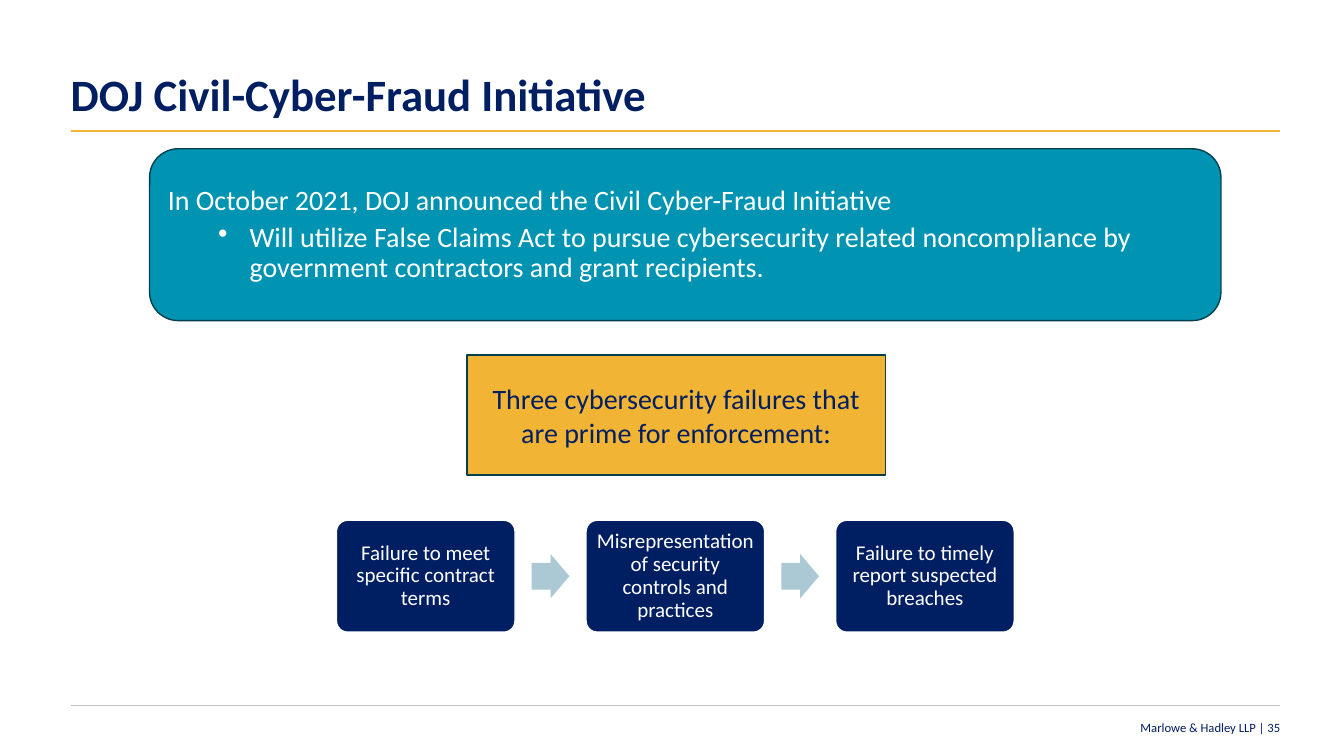
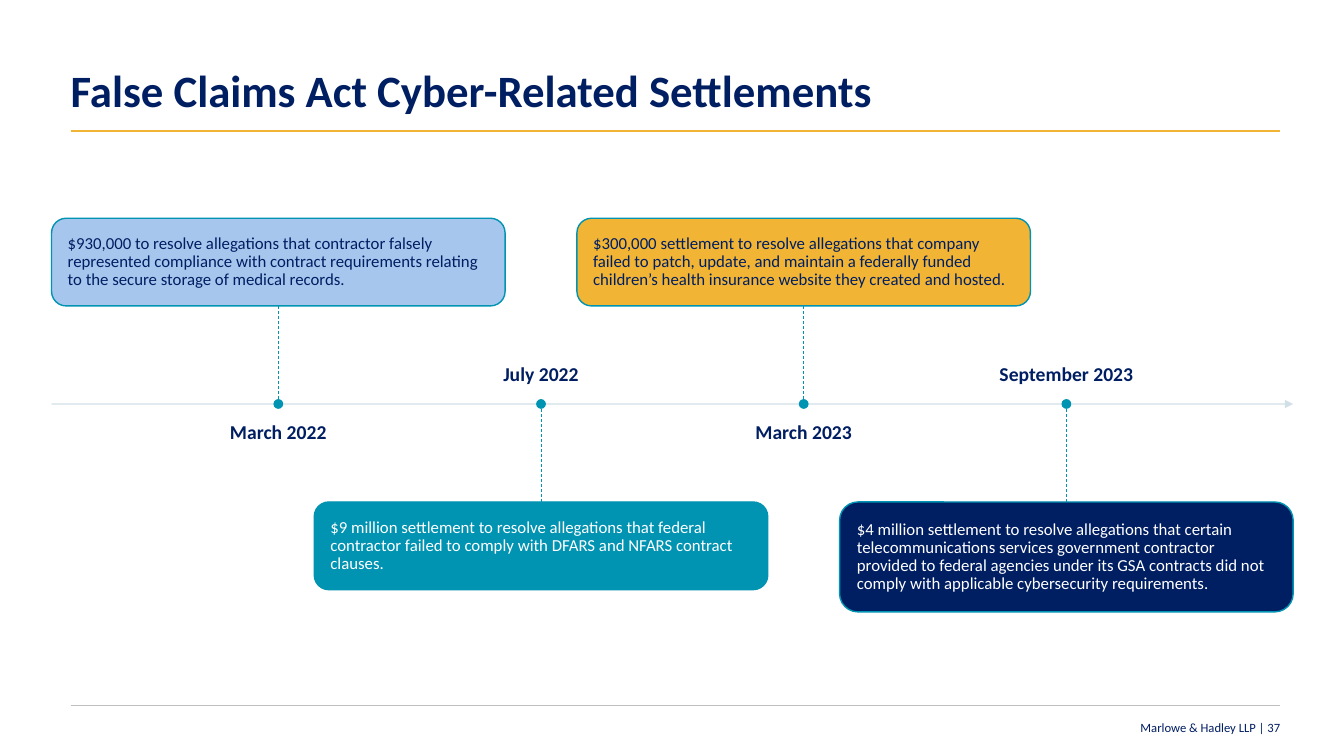
"""Build two slides on cyber-fraud enforcement: an initiative overview and a settlement timeline."""
from lxml import etree
from pptx import Presentation
from pptx.dml.color import RGBColor
from pptx.enum.dml import MSO_LINE
from pptx.enum.shapes import MSO_CONNECTOR, MSO_SHAPE
from pptx.enum.text import MSO_ANCHOR, MSO_AUTO_SIZE, PP_ALIGN
from pptx.oxml.ns import qn
from pptx.util import Cm, Pt

ROUNDED, RECTANGLE = MSO_SHAPE.ROUNDED_RECTANGLE, MSO_SHAPE.RECTANGLE
ARROW, DOT = MSO_SHAPE.RIGHT_ARROW, MSO_SHAPE.OVAL
TOP, MIDDLE, BOTTOM = MSO_ANCHOR.TOP, MSO_ANCHOR.MIDDLE, MSO_ANCHOR.BOTTOM
LEFT, CENTER, RIGHT = PP_ALIGN.LEFT, PP_ALIGN.CENTER, PP_ALIGN.RIGHT
TOP_SIDE, BOTTOM_SIDE = 0, 2

FONT = "Calibri"
NAVY, TEAL, GOLD, WHITE = "001E62", "0093B2", "F1B434", "FFFFFF"
SKY, MIST, PALE, GREY, DARK_TEAL = "A7C6ED", "ABC8D5", "CCDCE4", "BFBFBF", "00404E"

FIRM = "Marlowe & Hadley LLP"
MARGIN, CONTENT_WIDTH = 1.78, 30.48

INITIATIVE = {"title": "DOJ Civil-Cyber-Fraud Initiative", "title_top": 1.78, "number": 35}
ANNOUNCEMENT = [
    "In October 2021, DOJ announced the Civil Cyber-Fraud Initiative",
    "Will utilize False Claims Act to pursue cybersecurity related noncompliance "
    "by government contractors and grant recipients.",
]
FAILURES_HEADING = "Three cybersecurity failures that are prime for enforcement:"
FAILURES = [
    "Failure to meet specific contract terms",
    "Misrepresentation of security controls and practices",
    "Failure to timely report suspected breaches",
]

TIMELINE = {"title": "False Claims Act Cyber-Related Settlements", "title_top": 1.68, "number": 37}
SETTLEMENTS = [
    ("March 2022", SKY, NAVY, 2.21,
     "$930,000 to resolve allegations that contractor falsely represented compliance with "
     "contract requirements relating to the secure storage of medical records."),
    ("July 2022", TEAL, WHITE, 2.21,
     "$9 million settlement to resolve allegations that federal contractor failed to "
     "comply with DFARS and NFARS contract clauses."),
    ("March 2023", GOLD, NAVY, 2.21,
     "$300,000 settlement to resolve allegations that company failed to patch, update, and "
     "maintain a federally funded children’s health insurance website they created and hosted."),
    ("September 2023", NAVY, WHITE, 2.77,
     "$4 million settlement to resolve allegations that certain telecommunications services "
     "government contractor provided to federal agencies under its GSA contracts did "
     "not comply with applicable cybersecurity requirements."),
]


def rgb(value):
    """Turn a hex string into a colour."""
    return RGBColor.from_string(value)


def set_frame(frame, anchor, margin=None):
    """Set wrapping, anchor and equal inner margins of a text frame."""
    frame.word_wrap = True
    frame.auto_size = MSO_AUTO_SIZE.NONE
    frame.vertical_anchor = anchor
    if margin is not None:
        frame.margin_left = frame.margin_right = Cm(margin)
        frame.margin_top = frame.margin_bottom = Cm(margin)


def write(paragraph, text, size, color, align=LEFT, bold=False, spacing=0.9):
    """Add one formatted run to a paragraph."""
    paragraph.alignment = align
    paragraph.line_spacing = spacing
    run = paragraph.add_run()
    run.text = text
    font = run.font
    font.name, font.size, font.bold = FONT, Pt(size), bold
    font.color.rgb = rgb(color)


def add_box(slide, kind, left, top, width, height, fill, line=None):
    """Add a filled preset shape with an optional one-point outline."""
    shape = slide.shapes.add_shape(kind, Cm(left), Cm(top), Cm(width), Cm(height))
    shape.shadow.inherit = False
    shape.fill.solid()
    shape.fill.fore_color.rgb = rgb(fill)
    if line:
        shape.line.color.rgb = rgb(line)
        shape.line.width = Pt(1)
    else:
        shape.line.fill.background()
    return shape


def add_label(slide, left, top, width, height, text, size, anchor, align, bold=False):
    """Add a navy text box without inner margins."""
    label = slide.shapes.add_textbox(Cm(left), Cm(top), Cm(width), Cm(height))
    set_frame(label.text_frame, anchor, 0)
    write(label.text_frame.paragraphs[0], text, size, NAVY, align, bold)


def add_line(slide, x1, y1, x2, y2, color, width):
    """Add a straight connector without a shadow."""
    connector = slide.shapes.add_connector(MSO_CONNECTOR.STRAIGHT, Cm(x1), Cm(y1), Cm(x2), Cm(y2))
    connector.line.color.rgb = rgb(color)
    connector.line.width = Pt(width)
    etree.SubElement(connector._element.spPr, qn("a:effectLst"))
    return connector


def add_bullet(paragraph, left, hanging):
    """Give a paragraph a round bullet with a hanging indent."""
    properties = paragraph._p.get_or_add_pPr()
    properties.set("marL", str(Cm(left)))
    properties.set("indent", str(-Cm(hanging)))
    etree.SubElement(properties, qn("a:buChar")).set("char", "•")


def add_base_slide(presentation, content):
    """Add a slide with its title, two rules and footer."""
    slide = presentation.slides.add_slide(presentation.slide_layouts[5])
    right = MARGIN + CONTENT_WIDTH
    for y, color, width in ((17.78, GREY, 0.25), (3.3, GOLD, 1.5)):
        add_line(slide, MARGIN, y, right, y, color, width)
    title = slide.shapes.title
    title.left, title.top = Cm(MARGIN), Cm(content["title_top"])
    title.width, title.height = Cm(CONTENT_WIDTH), Cm(1.27)
    set_frame(title.text_frame, BOTTOM, 0)
    write(title.text_frame.paragraphs[0], content["title"], 32, NAVY, bold=True)
    footer = f"{FIRM} | {content['number']}"
    add_label(slide, right - 5, 18.16, 5, 0.38, footer, 9, MIDDLE, RIGHT)
    return slide


def build_initiative(presentation):
    """Build the announcement, the heading and the row of failures."""
    slide = add_base_slide(presentation, INITIATIVE)
    banner = add_box(slide, ROUNDED, 3.77, 3.75, 27, 4.33, TEAL, DARK_TEAL)
    frame = banner.text_frame
    set_frame(frame, MIDDLE)
    write(frame.paragraphs[0], ANNOUNCEMENT[0], 20, WHITE)
    detail = frame.add_paragraph()
    detail.level = 1
    detail.space_before = Pt(5)
    detail.line_spacing = 0.9
    add_bullet(detail, 2.06, 0.79)
    write(detail, ANNOUNCEMENT[1], 20, WHITE)

    heading = add_box(slide, RECTANGLE, 11.77, 8.95, 10.54, 3.02, GOLD, DARK_TEAL)
    set_frame(heading.text_frame, MIDDLE)
    write(heading.text_frame.paragraphs[0], FAILURES_HEADING, 20, NAVY, CENTER, spacing=1)

    first_left, top, width, height, pitch = 8.48, 13.11, 4.5, 2.82, 6.29
    arrow_width, arrow_height = 0.95, 1.12
    for index, failure in enumerate(FAILURES):
        left = first_left + index * pitch
        step = add_box(slide, ROUNDED, left, top, width, height, NAVY, WHITE)
        step.adjustments[0] = 0.1
        set_frame(step.text_frame, MIDDLE, 0.15)
        write(step.text_frame.paragraphs[0], failure, 15, WHITE, CENTER)
        if index:
            arrow = add_box(slide, ARROW, left - (pitch - width + arrow_width) / 2,
                            top + (height - arrow_height) / 2, arrow_width, arrow_height, MIST)
            arrow.adjustments[0] = 0.6


def build_timeline(presentation):
    """Build the time axis with cards alternating above and below it."""
    slide = add_base_slide(presentation, TIMELINE)
    first_left, card_width, pitch, axis_y = 1.3, 11.43, 6.62, 10.18
    card_gap, label_gap, label_width, label_height, dot = 2.47, 0.47, 10.06, 1.47, 0.21
    axis_end = first_left + pitch * (len(SETTLEMENTS) - 1) + card_width
    axis = add_line(slide, first_left, axis_y, axis_end, axis_y, PALE, 1)
    outline = axis._element.spPr.find(qn("a:ln"))
    etree.SubElement(outline.find(".//" + qn("a:srgbClr")), qn("a:alpha")).set("val", "90000")
    etree.SubElement(outline, qn("a:tailEnd")).set("type", "triangle")

    for index, (date, fill, color, height, text) in enumerate(SETTLEMENTS):
        above = index % 2 == 0
        left = first_left + index * pitch
        center = left + card_width / 2
        card_top = axis_y - card_gap - height if above else axis_y + card_gap
        label_top = axis_y + label_gap if above else axis_y - label_gap - label_height
        add_label(slide, center - label_width / 2, label_top, label_width, label_height,
                  date, 14, TOP if above else BOTTOM, CENTER, bold=True)
        card = add_box(slide, ROUNDED, left, card_top, card_width, height, fill, TEAL)
        set_frame(card.text_frame, MIDDLE, 0.3)
        write(card.text_frame.paragraphs[0], text, 12, color)
        stem = add_line(slide, center, card_top, center, axis_y, TEAL, 0.5)
        stem.line.dash_style = MSO_LINE.DASH
        stem.begin_connect(card, BOTTOM_SIDE if above else TOP_SIDE)
        add_box(slide, DOT, center - dot / 2, axis_y - dot / 2, dot, dot, TEAL, TEAL)


def main():
    """Create and save the presentation."""
    presentation = Presentation()
    presentation.slide_width, presentation.slide_height = Cm(33.87), Cm(19.05)
    build_initiative(presentation)
    build_timeline(presentation)
    presentation.save("out.pptx")


if __name__ == "__main__":
    main()
